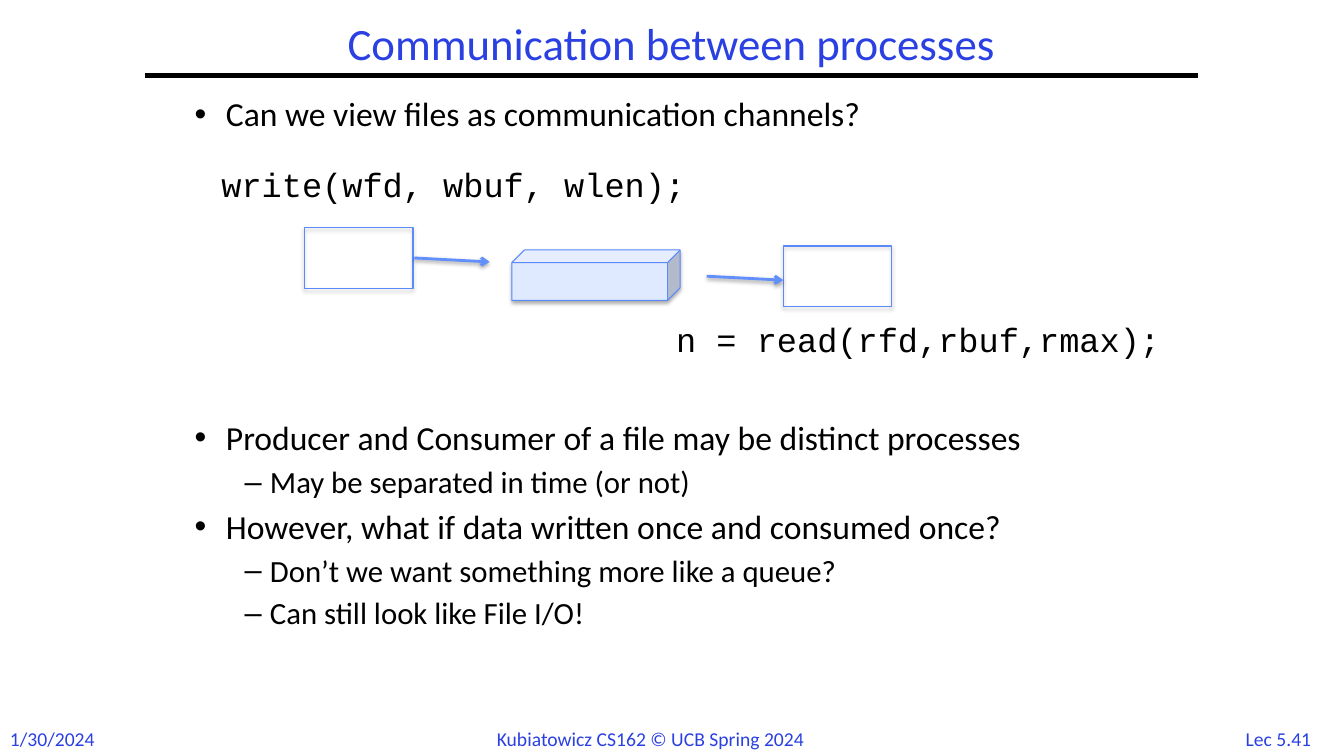
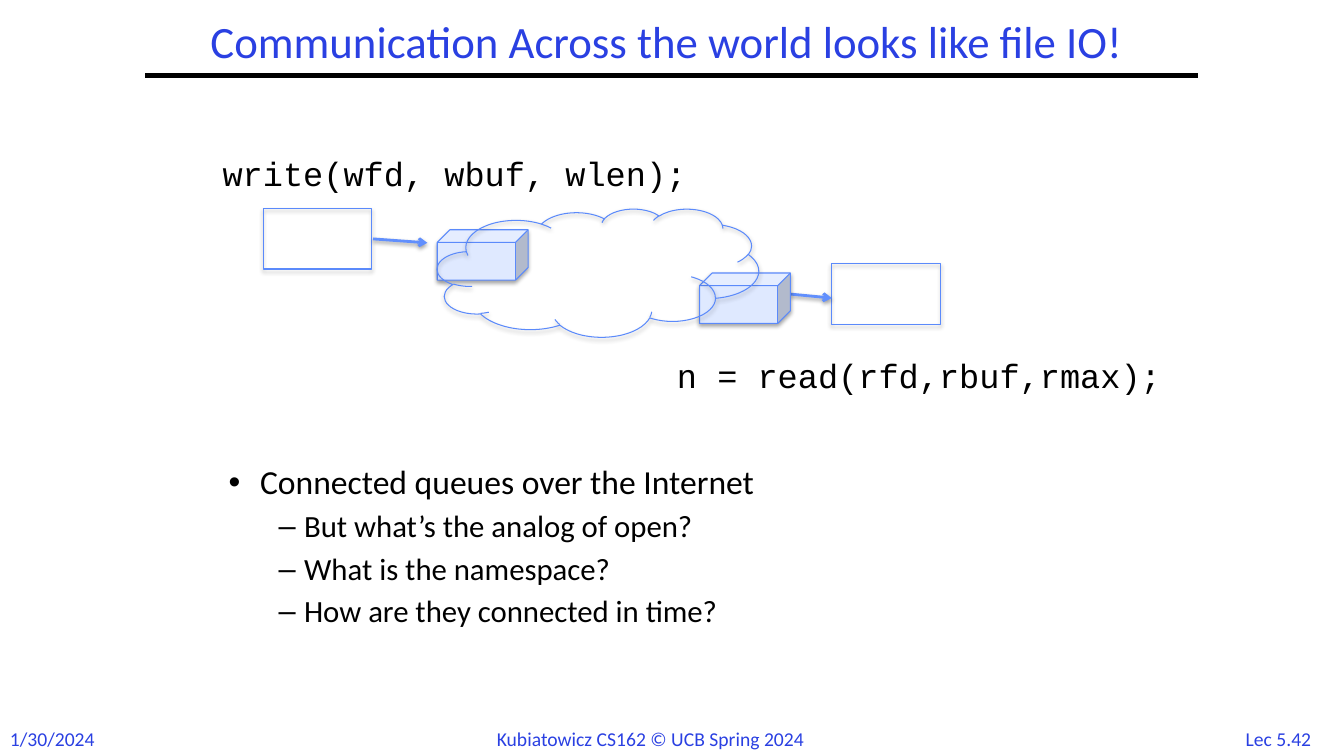
import dataclasses

import lxml.etree
import pptx
import pptx.dml.color
import pptx.enum.shapes
import pptx.enum.text
import pptx.oxml.ns
import pptx.util

Cm = pptx.util.Cm
Pt = pptx.util.Pt
qn = pptx.oxml.ns.qn
Shapes = pptx.enum.shapes.MSO_SHAPE
Align = pptx.enum.text.PP_ALIGN


def rgb(code):
    return pptx.dml.color.RGBColor.from_string(code)


@dataclasses.dataclass(frozen=True)
class Theme:
    accent: str = "2A40E2"
    ink: str = "000000"
    outline: str = "5B8AFB"
    arrow: str = "618FFD"
    cube: str = "DFE9FF"
    text_font: str = "Calibri"
    code_font: str = "Courier New"
    title_size: int = 32
    code_size: int = 24
    footer_size: int = 14
    list_sizes: tuple = (24, 22)
    list_indents: tuple = ((0.79, -0.79), (1.9, -0.64))
    line_spacing: float = 0.9
    space_ratio: float = 0.3


class Deck:
    """Lecture slides that share one theme, a title rule and a footer."""

    def __init__(self, theme):
        self.theme = theme
        self.show = pptx.Presentation()
        self.show.slide_width = Cm(33.87)
        self.show.slide_height = Cm(19.05)
        self.slide = None

    def new_slide(self, title, title_box, page):
        self.slide = self.show.slides.add_slide(self.show.slide_layouts[1])
        heading = self.slide.shapes.title
        self.place(heading, *title_box)
        heading.text_frame.text = title
        line = heading.text_frame.paragraphs[0]
        self.style(line, self.theme.text_font, self.theme.title_size, self.theme.accent)
        line.alignment = Align.CENTER
        line.line_spacing = self.theme.line_spacing
        self.connect((3.66, 1.9), (30.2, 1.9), self.theme.ink, 3)
        for text, left, width, alignment in (
            ("1/30/2024", 0, 2.72, Align.LEFT),
            ("Kubiatowicz CS162 © UCB Spring 2024", 12.27, 9.35, Align.LEFT),
            (page, 30.99, 2.46, Align.CENTER),
        ):
            self.text(text, (left, 18.19, width, 0.85), self.theme.text_font,
                      self.theme.footer_size, self.theme.accent, alignment)

    def place(self, shape, left, top, width, height):
        shape.left, shape.top = Cm(left), Cm(top)
        shape.width, shape.height = Cm(width), Cm(height)
        shape.text_frame.auto_size = pptx.enum.text.MSO_AUTO_SIZE.NONE

    def style(self, paragraph, font, size, color):
        paragraph.font.name = font
        paragraph.font.size = Pt(size)
        paragraph.font.color.rgb = rgb(color)

    def text(self, text, box, font, size, color, alignment=Align.LEFT):
        frame = self.slide.shapes.add_textbox(*map(Cm, box)).text_frame
        frame.word_wrap = True
        frame.text = text
        frame.paragraphs[0].alignment = alignment
        self.style(frame.paragraphs[0], font, size, color)

    def code(self, text, left, top):
        self.text(text, (left, top, 12.98, 1.27), self.theme.code_font,
                  self.theme.code_size, self.theme.ink)

    def bullets(self, box, items, gaps=None):
        body = self.slide.placeholders[1]
        self.place(body, *box)
        frame = body.text_frame
        frame.text = "\n".join(text for level, text in items)
        for index, (paragraph, (level, text)) in enumerate(zip(frame.paragraphs, items)):
            size = self.theme.list_sizes[level]
            margin, indent = self.theme.list_indents[level]
            paragraph.level = level
            paragraph.line_spacing = self.theme.line_spacing
            paragraph.space_before = Pt((gaps or {}).get(index, size * self.theme.space_ratio))
            self.style(paragraph, self.theme.text_font, size, self.theme.ink)
            properties = paragraph._p.get_or_add_pPr()
            properties.set("marL", str(Cm(margin)))
            properties.set("indent", str(Cm(indent)))

    def cast_shadow(self, effects, distance, opacity):
        shadow = lxml.etree.SubElement(
            effects, qn("a:outerShdw"), blurRad=str(Pt(3.1)), dist=str(Pt(distance)),
            dir="5400000", rotWithShape="0")
        color = lxml.etree.SubElement(shadow, qn("a:srgbClr"), val=self.theme.ink)
        lxml.etree.SubElement(color, qn("a:alpha"), val=str(opacity * 1000))

    def outline(self, kind, left, top, width, height, fill=None):
        shape = self.slide.shapes.add_shape(kind, *map(Cm, (left, top, width, height)))
        if fill:
            shape.fill.solid()
            shape.fill.fore_color.rgb = rgb(fill)
        else:
            shape.fill.background()
        shape.line.color.rgb = rgb(self.theme.outline)
        shape.line.width = Pt(0.75)
        shape.shadow.inherit = False
        self.cast_shadow(shape._element.spPr.find(qn("a:effectLst")), 1.8, 35)

    def cube(self, left, top, width):
        self.outline(Shapes.CUBE, left, top, width, 1.27, self.theme.cube)

    def cloud(self, left, top, width, height):
        self.outline(Shapes.CLOUD, left, top, width, height)

    def connect(self, start, end, color, width):
        line = self.slide.shapes.add_connector(
            pptx.enum.shapes.MSO_CONNECTOR.STRAIGHT, *map(Cm, start + end))
        line.line.color.rgb = rgb(color)
        line.line.width = Pt(width)
        effects = lxml.etree.SubElement(line._element.spPr, qn("a:effectLst"))
        return line, effects

    def process(self, left, top, arrow_from, arrow_to):
        self.outline(Shapes.RECTANGLE, left, top, 2.74, 1.52)
        middle = top + 0.76
        line, effects = self.connect((arrow_from, middle), (arrow_to, middle + 0.1),
                                     self.theme.arrow, 2)
        lxml.etree.SubElement(line.line._get_or_add_ln(), qn("a:tailEnd"), type="arrow")
        self.cast_shadow(effects, 1.6, 38)


def main():
    deck = Deck(Theme())
    write_call = "write(wfd, wbuf, wlen);"
    read_call = "n = read(rfd,rbuf,rmax);"

    deck.new_slide("Communication between processes", (3.66, 0.43, 26.52, 1.47), "Lec 5.41")
    deck.bullets((4.65, 2.34, 24.97, 15.8), [
        (0, "Can we view files as communication channels?"),
        (0, "Producer and Consumer of a file may be distinct processes"),
        (1, "May be separated in time (or not)"),
        (0, "However, what if data written once and consumed once?"),
        (1, "Don’t we want something more like a queue?"),
        (1, "Can still look like File I/O!"),
    ], gaps={1: 205})
    deck.code(write_call, 5.33, 4.01)
    deck.code(read_call, 16.79, 7.9)
    deck.cube(12.9, 6.3, 4.24)
    deck.process(7.67, 5.74, 10.44, 12.34)
    deck.process(19.74, 6.2, 17.81, 19.74)

    deck.new_slide("Communication Across the world looks like file IO! ",
                   (2.54, 0.33, 28.78, 1.57), "Lec 5.42")
    deck.bullets((5.51, 11.61, 22.86, 5.89), [
        (0, "Connected queues over the Internet"),
        (1, "But what’s the analog of open?"),
        (1, "What is the namespace?"),
        (1, "How are they connected in time?"),
    ])
    deck.code(write_call, 5.36, 3.73)
    deck.code(read_call, 16.81, 8.81)
    deck.cube(11.02, 5.79, 2.29)
    deck.process(6.63, 5.26, 9.4, 10.77)
    deck.process(20.96, 6.65, 19.91, 20.96)
    deck.cube(17.63, 6.88, 2.29)
    deck.cloud(11.02, 5.26, 8.1, 3.23)

    deck.show.save("out.pptx")


if __name__ == "__main__":
    main()
